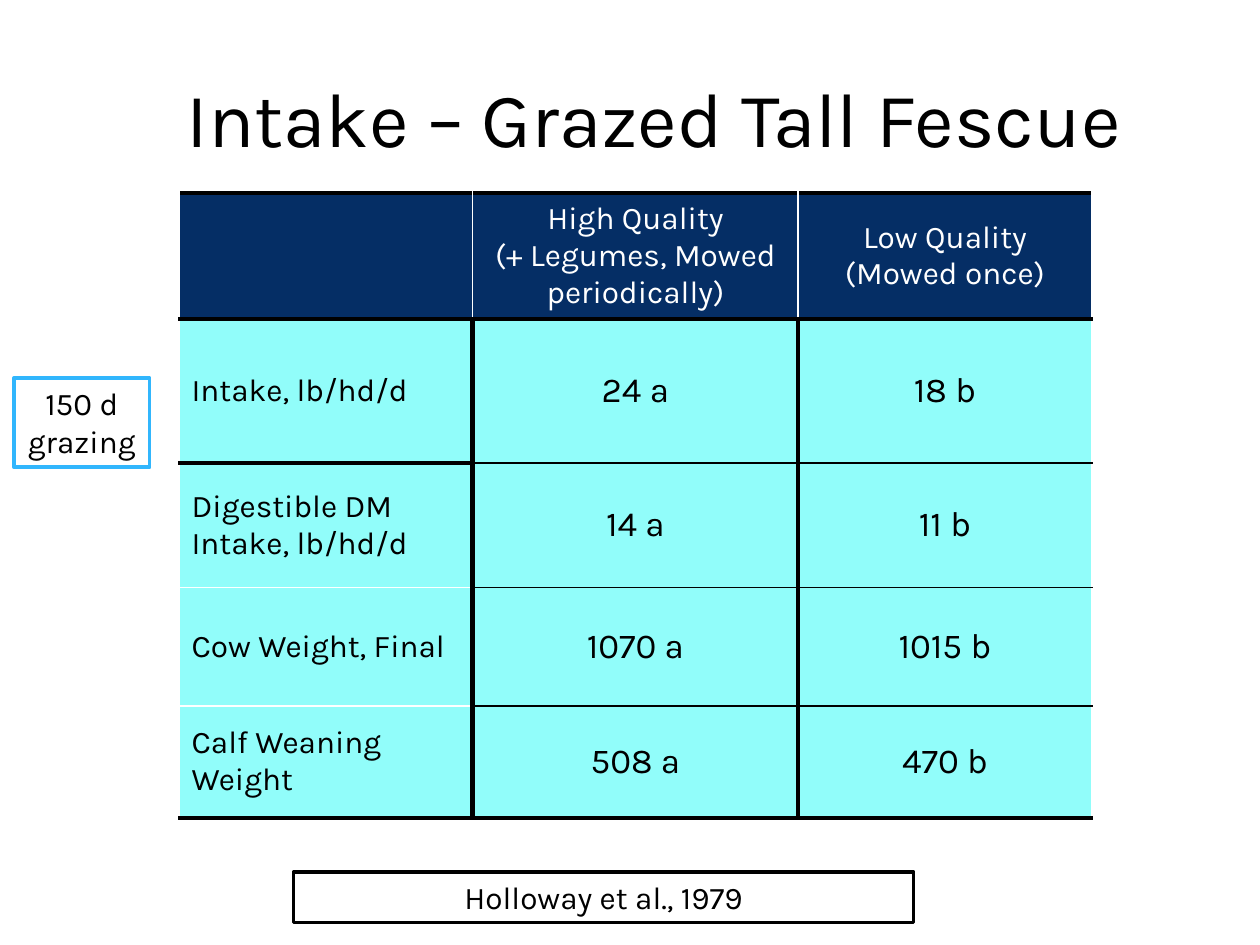
from dataclasses import dataclass

import lxml.etree
import pptx
import pptx.dml.color
import pptx.enum.shapes
import pptx.enum.text
import pptx.oxml.ns
import pptx.util

Cm = pptx.util.Cm
Pt = pptx.util.Pt
Align = pptx.enum.text.PP_ALIGN
Anchor = pptx.enum.text.MSO_ANCHOR


@dataclass(frozen=True)
class Theme:
    font: str = "Karla"
    black: str = "000000"
    white: str = "FFFFFF"
    navy: str = "052E65"
    aqua: str = "91FDFA"
    blue: str = "31B6FD"
    title: int = 44
    value: int = 20
    label: int = 18
    thick: int = 3
    thin: int = 1


@dataclass(frozen=True)
class Box:
    text: str
    left: float
    top: float
    width: float
    height: float
    line: str


THEME = Theme()
CITE = Box("Holloway et al., 1979", 5.92, 17.58, 12.5, 1.02, THEME.black)
SPAN = Box("150 d grazing", 0.28, 7.62, 2.74, 1.8, THEME.blue)
ROWS = [
    ("", "High Quality\n(+ Legumes, Mowed periodically)", "Low Quality\n(Mowed once)"),
    ("Intake, lb/hd/d", "24 a", "18 b"),
    ("Digestible DM Intake, lb/hd/d", "14 a", "11 b"),
    ("Cow Weight, Final", "1070 a", "1015 b"),
    ("Calf Weaning Weight", "508 a", "470 b"),
]
WIDTHS = (5.92, 6.56, 5.92)
HEIGHTS = (2.51, 2.9, 2.51, 2.39, 2.26)


def rgb(color: str) -> pptx.dml.color.RGBColor:
    return pptx.dml.color.RGBColor.from_string(color)


def style(frame, size: int, color: str, align) -> None:
    for para in frame.paragraphs:
        para.alignment = align
        for run in para.runs:
            run.font.name = THEME.font
            run.font.size = Pt(size)
            run.font.bold = False
            run.font.color.rgb = rgb(color)


def add_box(slide, box: Box) -> None:
    shape = slide.shapes.add_shape(
        pptx.enum.shapes.MSO_SHAPE.RECTANGLE,
        Cm(box.left), Cm(box.top), Cm(box.width), Cm(box.height))
    shape.shadow.inherit = False
    shape.fill.solid()
    shape.fill.fore_color.rgb = rgb(THEME.white)
    shape.line.color.rgb = rgb(box.line)
    shape.line.width = Pt(2)
    frame = shape.text_frame
    frame.word_wrap = True
    frame.auto_size = pptx.enum.text.MSO_AUTO_SIZE.SHAPE_TO_FIT_TEXT
    frame.vertical_anchor = Anchor.TOP
    frame.text = box.text
    style(frame, THEME.label, THEME.black, Align.CENTER)


def add_edge(cell, side: str, color: str, width: int) -> None:
    qn = pptx.oxml.ns.qn
    edge = lxml.etree.SubElement(
        cell._tc.get_or_add_tcPr(), qn(f"a:ln{side}"), w=str(Pt(width)))
    fill = lxml.etree.SubElement(edge, qn("a:solidFill"))
    lxml.etree.SubElement(fill, qn("a:srgbClr"), val=color)


def row_edge(line: int, col: int) -> tuple[str, int]:
    """Give the colour and width of the rule above row number line."""
    if line in (0, 1, len(ROWS)) or (line == 2 and col == 0):
        return THEME.black, THEME.thick
    return (THEME.white if col == 0 else THEME.black), THEME.thin


def col_edge(line: int, row: int) -> tuple[str, int]:
    """Give the colour and width of the rule left of column number line."""
    if row > 0 and 0 < line < len(WIDTHS):
        return THEME.black, THEME.thick
    return THEME.white, THEME.thin


def fill_cell(cell, row: int, col: int, text: str) -> None:
    add_edge(cell, "L", *col_edge(col, row))
    add_edge(cell, "R", *col_edge(col + 1, row))
    add_edge(cell, "T", *row_edge(row, col))
    add_edge(cell, "B", *row_edge(row + 1, col))
    head = row == 0
    cell.fill.solid()
    cell.fill.fore_color.rgb = rgb(THEME.navy if head else THEME.aqua)
    cell.vertical_anchor = Anchor.MIDDLE
    cell.text_frame.text = text
    style(cell.text_frame,
          THEME.label if head or col == 0 else THEME.value,
          THEME.white if head else THEME.black,
          Align.CENTER if head or col else Align.LEFT)


def add_grid(slide) -> None:
    table = slide.shapes.add_table(
        len(ROWS), len(WIDTHS), Cm(3.61), Cm(3.89),
        Cm(sum(WIDTHS)), Cm(sum(HEIGHTS))).table
    table.horz_banding = False
    for col, width in zip(table.columns, WIDTHS):
        col.width = Cm(width)
    for row, height in zip(table.rows, HEIGHTS):
        row.height = Cm(height)
    for row, texts in enumerate(ROWS):
        for col, text in enumerate(texts):
            fill_cell(table.cell(row, col), row, col, text)


def set_title(slide) -> None:
    title = slide.shapes.title
    title.left, title.top = Cm(2.26), Cm(0.76)
    title.width, title.height = Cm(21.87), Cm(3.18)
    frame = title.text_frame
    frame.text = "Intake – Grazed Tall Fescue"
    frame.word_wrap = True
    frame.vertical_anchor = Anchor.MIDDLE
    style(frame, THEME.title, THEME.black, Align.CENTER)


def main() -> None:
    deck = pptx.Presentation()
    deck.slide_width, deck.slide_height = Cm(25.4), Cm(19.05)
    slide = deck.slides.add_slide(deck.slide_layouts.get_by_name("Title Only"))
    set_title(slide)
    add_box(slide, CITE)
    add_grid(slide)
    add_box(slide, SPAN)
    deck.save("out.pptx")


if __name__ == "__main__":
    main()
